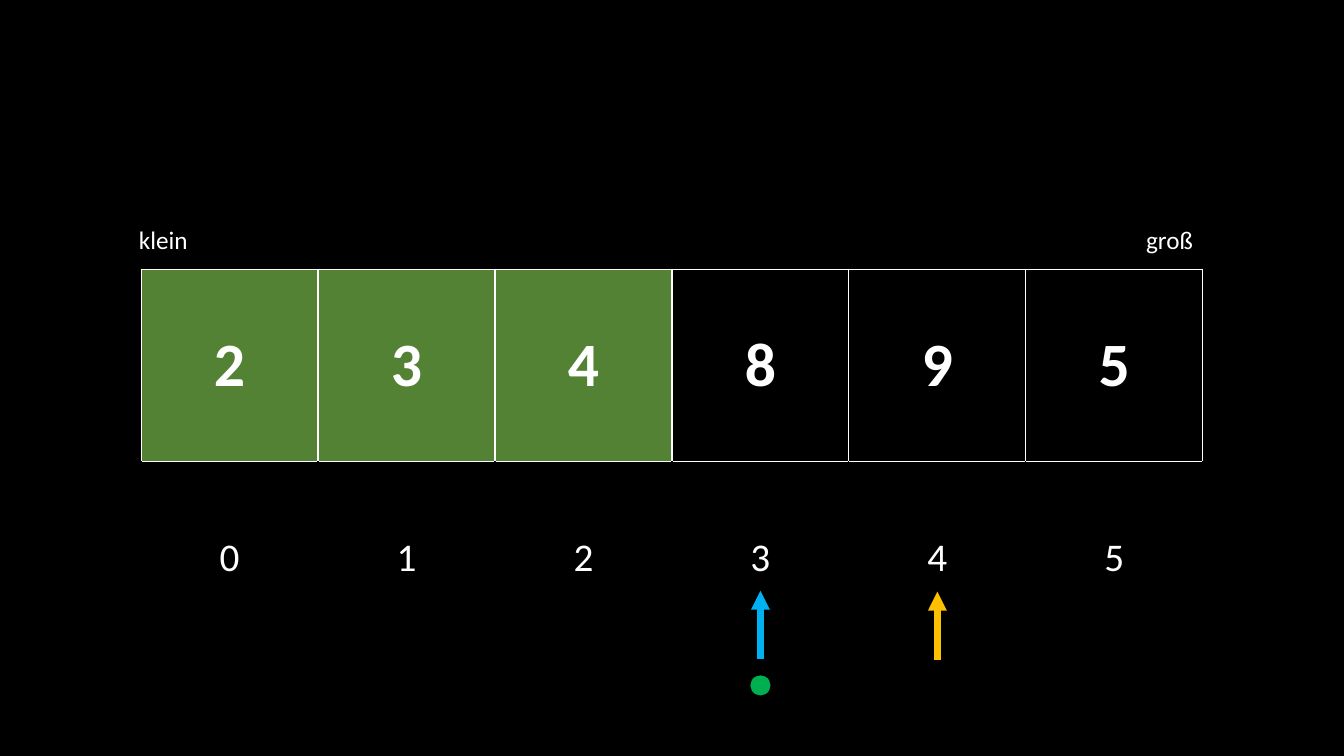
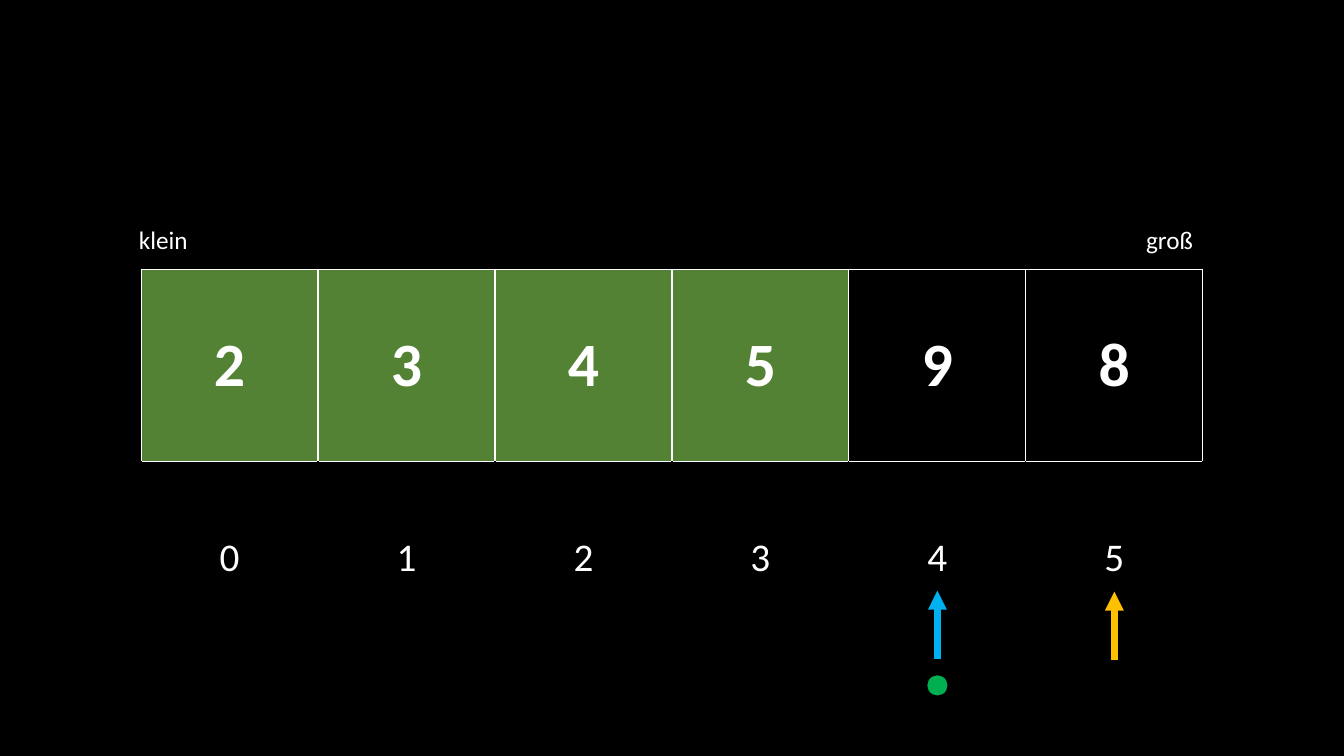
from lxml import etree
from pptx import Presentation
from pptx.dml.color import RGBColor
from pptx.enum import shapes, text
from pptx.oxml import ns
from pptx.util import Inches, Pt

BLACK = RGBColor(0x00, 0x00, 0x00)
WHITE = RGBColor(0xFF, 0xFF, 0xFF)
SORTED_GREEN = RGBColor(0x54, 0x82, 0x35)
BLUE = RGBColor(0x00, 0xB0, 0xF0)
AMBER = RGBColor(0xFF, 0xC0, 0x00)
DOT_GREEN = RGBColor(0x00, 0xB0, 0x50)
FONT = "Calibri"

TABLE_LEFT = 1.4
TABLE_TOP = 2.67
COLUMN_WIDTH = 1.755
ROW_HEIGHT = 1.91
ARROW_LENGTH = 0.68
DOT_TOP = 6.7
DOT_SIZE = 0.2

STEPS = [
    {"values": [2, 3, 4, 8, 9, 5], "sorted_count": 3, "minimum": 3, "candidate": 4},
    {"values": [2, 3, 4, 5, 9, 8], "sorted_count": 4, "minimum": 4, "candidate": 5},
]


def column_center(index):
    return TABLE_LEFT + COLUMN_WIDTH * (index + 0.5)


def add_run(paragraph, words, size, bold=False):
    run = paragraph.add_run()
    run.text = words
    run.font.name = FONT
    run.font.size = Pt(size)
    run.font.bold = bold
    run.font.color.rgb = WHITE


def set_borders(cell, side_color, top_color, bottom_color):
    properties = cell._tc.get_or_add_tcPr()
    colors = {"lnL": side_color, "lnR": side_color, "lnT": top_color, "lnB": bottom_color}
    for tag, color in colors.items():
        line = etree.SubElement(properties, ns.qn(f"a:{tag}"), w=str(Pt(1)))
        fill = etree.SubElement(line, ns.qn("a:solidFill"))
        etree.SubElement(fill, ns.qn("a:srgbClr"), val=str(color))


def fill_cell(cell, words, size, bold=False, color=None):
    cell.vertical_anchor = text.MSO_ANCHOR.MIDDLE
    paragraph = cell.text_frame.paragraphs[0]
    paragraph.alignment = text.PP_ALIGN.CENTER
    add_run(paragraph, words, size, bold)
    if color is None:
        cell.fill.background()
    else:
        cell.fill.solid()
        cell.fill.fore_color.rgb = color


def add_array(slide, values, sorted_count):
    count = len(values)
    table = slide.shapes.add_table(
        2, count, Inches(TABLE_LEFT), Inches(TABLE_TOP),
        Inches(COLUMN_WIDTH * count), Inches(ROW_HEIGHT * 2)).table
    table.first_row = False
    table.horz_banding = False
    for column in table.columns:
        column.width = Inches(COLUMN_WIDTH)
    for row in table.rows:
        row.height = Inches(ROW_HEIGHT)
    for index, value in enumerate(values):
        value_cell, index_cell = table.cell(0, index), table.cell(1, index)
        set_borders(value_cell, WHITE, WHITE, WHITE)
        set_borders(index_cell, BLACK, WHITE, BLACK)
        color = SORTED_GREEN if index < sorted_count else None
        fill_cell(value_cell, str(value), 44, bold=True, color=color)
        fill_cell(index_cell, str(index), 28)


def add_label(slide, words, left, alignment):
    box = slide.shapes.add_textbox(Inches(left), Inches(2.18), Inches(1.51), Inches(0.4))
    frame = box.text_frame
    frame.word_wrap = True
    frame.auto_size = text.MSO_AUTO_SIZE.SHAPE_TO_FIT_TEXT
    paragraph = frame.paragraphs[0]
    paragraph.alignment = alignment
    add_run(paragraph, words, 18)


def add_arrow(slide, index, bottom, color):
    center = Inches(column_center(index))
    arrow = slide.shapes.add_connector(
        shapes.MSO_CONNECTOR.STRAIGHT,
        center, Inches(bottom), center, Inches(bottom - ARROW_LENGTH))
    arrow.line.color.rgb = color
    arrow.line.width = Pt(4.5)
    etree.SubElement(arrow.line._get_or_add_ln(), ns.qn("a:tailEnd"), type="triangle")
    etree.SubElement(arrow._element.spPr, ns.qn("a:effectLst"))


def add_dot(slide, index):
    dot = slide.shapes.add_shape(
        shapes.MSO_SHAPE.OVAL, Inches(column_center(index) - DOT_SIZE / 2),
        Inches(DOT_TOP), Inches(DOT_SIZE), Inches(DOT_SIZE))
    dot.shadow.inherit = False
    dot.fill.solid()
    dot.fill.fore_color.rgb = DOT_GREEN
    dot.line.fill.background()


def add_step(presentation, values, sorted_count, minimum, candidate):
    slide = presentation.slides.add_slide(presentation.slide_layouts[6])
    add_array(slide, values, sorted_count)
    add_label(slide, "groß", 10.42, text.PP_ALIGN.RIGHT)
    add_label(slide, "klein", 1.28, text.PP_ALIGN.LEFT)
    add_arrow(slide, minimum, 6.54, BLUE)
    add_arrow(slide, candidate, 6.55, AMBER)
    add_dot(slide, minimum)


def main():
    presentation = Presentation()
    presentation.slide_width = Inches(13.33)
    presentation.slide_height = Inches(7.5)
    background = presentation.slide_master.background.fill
    background.solid()
    background.fore_color.rgb = BLACK
    for step in STEPS:
        add_step(presentation, **step)
    presentation.save("out.pptx")


if __name__ == "__main__":
    main()
